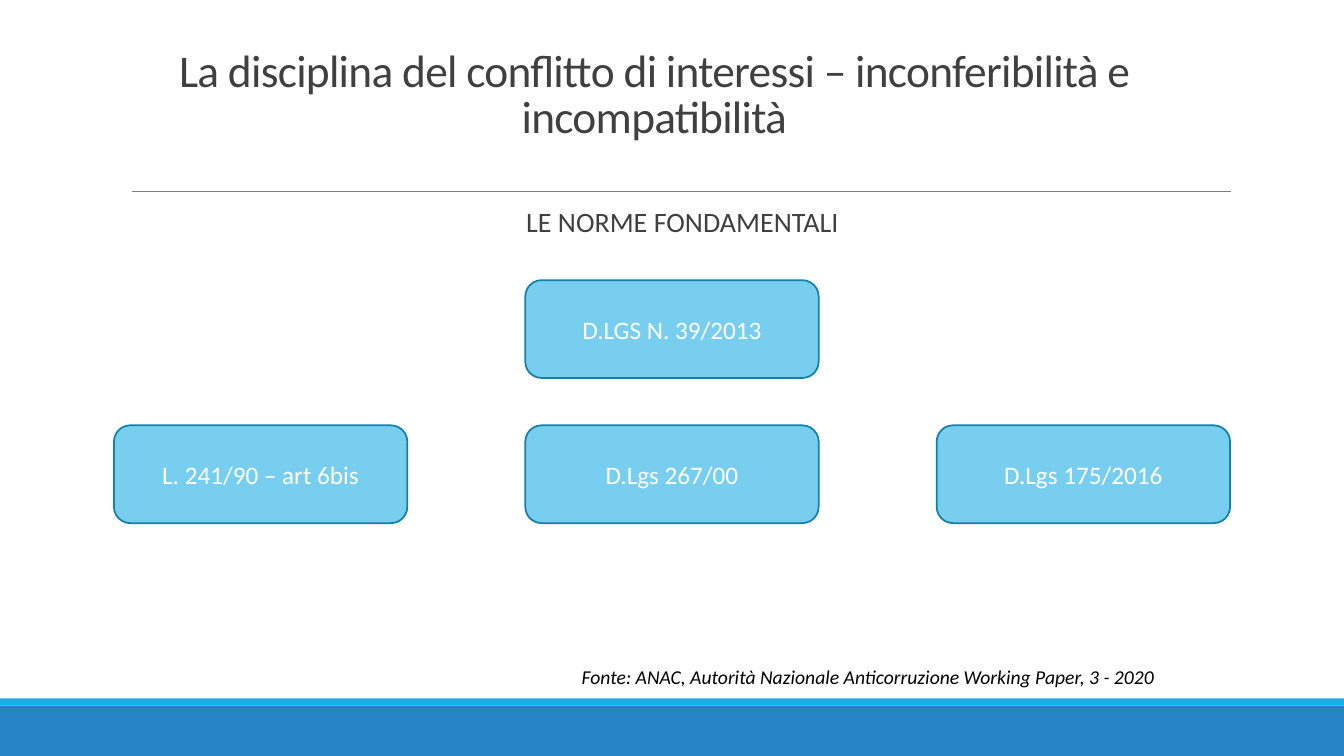
from lxml.etree import SubElement
from pptx import Presentation
from pptx.dml.color import RGBColor
from pptx.enum.shapes import MSO_CONNECTOR, MSO_SHAPE as SHAPE
from pptx.enum.text import MSO_ANCHOR as ANCHOR, PP_ALIGN as ALIGN
from pptx.oxml.ns import qn
from pptx.util import Inches, Pt

WHITE = RGBColor(0xFF, 0xFF, 0xFF)
BLACK = RGBColor(0, 0, 0)
DARK = RGBColor(0x40, 0x40, 0x40)
GREY = RGBColor(0x80, 0x80, 0x80)
BLUE = RGBColor(0x26, 0x83, 0xC6)
CYAN = RGBColor(0x1C, 0xAD, 0xE4)
CARD_FILL = RGBColor(0x77, 0xCE, 0xEF)
CARD_LINE = RGBColor(0x15, 0x80, 0xA9)

SLIDE_WIDTH, SLIDE_HEIGHT = 13.33, 7.5
CARD_WIDTH, CARD_HEIGHT = 2.91, 0.97
COLUMN_STEP, ROW_STEP = 4.08, 1.44
LAWS = [
    (1, 0, "D.LGS N. 39/2013"),
    (0, 1, "L. 241/90 – art 6bis"),
    (1, 1, "D.Lgs 267/00"),
    (2, 1, "D.Lgs 175/2016"),
]


def write(shape, text, size, color, align=ALIGN.CENTER, anchor=ANCHOR.TOP):
    frame = shape.text_frame
    frame.word_wrap = True
    frame.vertical_anchor = anchor
    para = frame.paragraphs[0]
    para.text = text
    para.alignment = align
    para.font.name = "Calibri"
    para.font.size = Pt(size)
    para.font.color.rgb = color
    return para


def add_text(page, box, *args, **options):
    shape = page.shapes.add_textbox(*map(Inches, box))
    return shape, write(shape, *args, **options)


def add_panel(page, kind, box, fill):
    shape = page.shapes.add_shape(kind, *map(Inches, box))
    shape.shadow.inherit = False
    shape.fill.solid()
    shape.fill.fore_color.rgb = fill
    shape.line.fill.background()
    return shape


def add_footer_bands(page, top, stripe):
    add_panel(page, SHAPE.RECTANGLE,
              (0, top + stripe, SLIDE_WIDTH, SLIDE_HEIGHT - top - stripe), BLUE)
    add_panel(page, SHAPE.RECTANGLE, (0, top, SLIDE_WIDTH, stripe), CYAN)


def add_rule(page, left, right, top):
    rule = page.shapes.add_connector(
        MSO_CONNECTOR.STRAIGHT, *map(Inches, (left, top, right, top)))
    rule.line.color.rgb = GREY
    rule.line.width = Pt(0.5)
    SubElement(rule._element.spPr, qn("a:effectLst"))


def add_title(page, box):
    _, para = add_text(
        page, box,
        "La disciplina del conflitto di interessi – inconferibilità e incompatibilità",
        32.4, DARK, anchor=ANCHOR.BOTTOM)
    para.line_spacing = 0.85
    para.runs[0]._r.get_or_add_rPr().set("spc", "-50")


def add_heading(page, box):
    shape, para = add_text(page, box, "LE NORME FONDAMENTALI", 20, DARK)
    shape.text_frame.margin_left = shape.text_frame.margin_right = 0
    para.line_spacing = 0.9
    para.space_before = Pt(12)
    para.space_after = Pt(2)
    properties = para._p.get_or_add_pPr()
    properties.set("marL", str(Inches(0.1)))
    properties.set("indent", str(-Inches(0.1)))
    bullet = properties.makeelement(qn("a:buChar"), {"char": " "})
    properties.find(qn("a:defRPr")).addprevious(bullet)


def add_law_cards(page, left, top):
    for column, row, law in LAWS:
        box = (left + column * COLUMN_STEP, top + row * ROW_STEP,
               CARD_WIDTH, CARD_HEIGHT)
        card = add_panel(page, SHAPE.FLOWCHART_ALTERNATE_PROCESS, box, CARD_FILL)
        card.line.color.rgb = CARD_LINE
        card.line.width = Pt(1.25)
        write(card, law, 18, WHITE, anchor=ANCHOR.MIDDLE)


def add_citation(page, box):
    _, para = add_text(
        page, box,
        "Fonte: ANAC, Autorità Nazionale Anticorruzione Working Paper, 3 - 2020",
        14, BLACK, align=ALIGN.LEFT)
    para.font.italic = True


def main():
    deck = Presentation()
    deck.slide_width = Inches(SLIDE_WIDTH)
    deck.slide_height = Inches(SLIDE_HEIGHT)
    page = deck.slides.add_slide(deck.slide_layouts[6])
    add_footer_bands(page, 6.93, 0.07)
    add_rule(page, 1.31, 12.21, 1.9)
    add_title(page, (0.78, 0.65, 11.42, 0.82))
    add_citation(page, (5.67, 6.55, 7, 0.34))
    add_heading(page, (1.2, 2.02, 11, 4.4))
    add_law_cards(page, 1.13, 2.78)
    deck.save("out.pptx")


if __name__ == "__main__":
    main()
